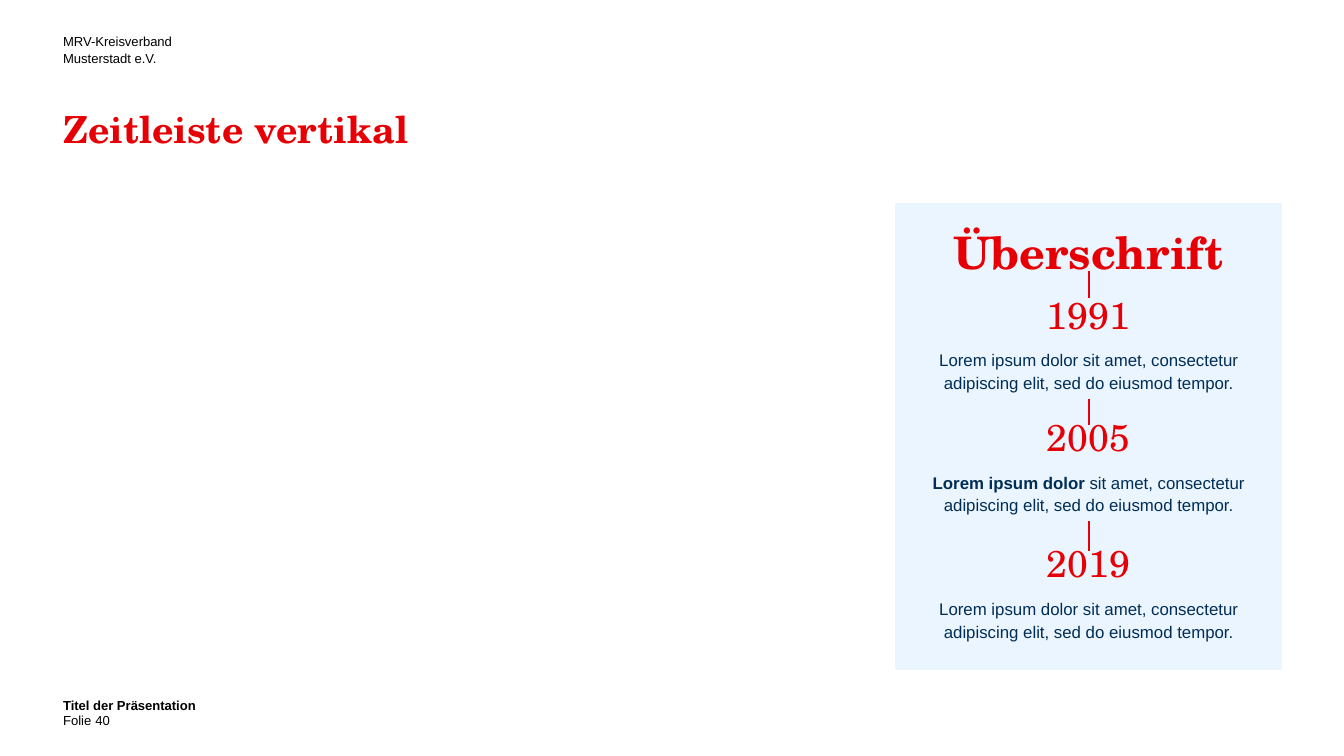
"""Build a slide with a vertical timeline in a tinted panel."""
import pptx
import pptx.dml.color
import pptx.enum.shapes
import pptx.enum.text
import pptx.oxml
import pptx.util

Inches = pptx.util.Inches
Pt = pptx.util.Pt
RGBColor = pptx.dml.color.RGBColor
ALIGN = pptx.enum.text.PP_ALIGN
ANCHOR = pptx.enum.text.MSO_ANCHOR
FIT = pptx.enum.text.MSO_AUTO_SIZE

RED = RGBColor(0xE6, 0x00, 0x05)
NAVY = RGBColor(0x00, 0x2D, 0x55)
BLACK = RGBColor(0x00, 0x00, 0x00)
PALE_BLUE = RGBColor(0xEB, 0xF5, 0xFF)


class TimelineSlide:
    """Holds the text styles and the slide being built."""

    serif = {"name": "TeX Gyre Schola", "size": Pt(20), "bold": False}
    sans = {"name": "Arial", "size": Pt(9), "bold": False}
    title = {**serif, "bold": True}
    heading = {**title, "size": Pt(24)}
    small = {**sans, "size": Pt(7)}
    strong = {**sans, "bold": True}
    label = {"line_spacing": Pt(9), "alignment": ALIGN.LEFT}
    headline = {"line_spacing": Pt(24), "alignment": ALIGN.LEFT}
    centred = {"line_spacing": Pt(12), "alignment": ALIGN.CENTER}
    flush = dict.fromkeys(("margin_left", "margin_top", "margin_right", "margin_bottom"), 0)

    def __init__(self, slide):
        self.slide = slide

    def apply(self, target, values):
        for attribute, value in values.items():
            setattr(target, attribute, value)

    def fill_text(self, shape, paragraphs, color, frame_format):
        frame = shape.text_frame
        self.apply(frame, {"word_wrap": True, "vertical_anchor": ANCHOR.TOP, **frame_format})
        for index, (layout, runs) in enumerate(paragraphs):
            paragraph = frame.add_paragraph() if index else frame.paragraphs[0]
            self.apply(paragraph, layout)
            for words, style in runs:
                run = paragraph.add_run()
                run.text = words
                self.apply(run.font, style)
                run.font.color.rgb = color if style["name"] == "Arial" else RED

    def add_title(self, words, box):
        heading = self.slide.shapes.title
        self.apply(heading, dict(zip(("left", "top", "width", "height"), map(Inches, box))))
        self.fill_text(heading, [(self.headline, [(words, self.title)])], RED,
                       {**self.flush, "auto_size": FIT.NONE})

    def add_text(self, paragraphs, box, color=BLACK, **frame_format):
        text_box = self.slide.shapes.add_textbox(*map(Inches, box))
        self.fill_text(text_box, paragraphs, color, frame_format)
        return text_box

    def add_label(self, lines, box, bold=False, **frame_format):
        paragraphs = [(self.label, [(line, {**self.small, "bold": bold})]) for line in lines]
        return self.add_text(paragraphs, box, **self.flush, **frame_format)

    def add_panel(self, box):
        panel = self.slide.shapes.add_shape(
            pptx.enum.shapes.MSO_SHAPE.RECTANGLE, *map(Inches, box))
        panel.shadow.inherit = False
        panel.fill.solid()
        panel.fill.fore_color.rgb = PALE_BLUE
        panel.line.color.rgb = PALE_BLUE
        panel.line.width = Pt(1)

    def add_entry(self, year, runs, box):
        paragraphs = [({**self.centred, "space_after": Pt(6)}, [(year, self.serif)]),
                      (self.centred, runs)]
        return self.add_text(paragraphs, box, NAVY, auto_size=FIT.SHAPE_TO_FIT_TEXT)

    def add_link(self, x, top, length, entry_above=None):
        link = self.slide.shapes.add_connector(
            pptx.enum.shapes.MSO_CONNECTOR.STRAIGHT,
            Inches(x), Inches(top), Inches(x), Inches(top + length))
        link.line.color.rgb = RED
        link.line.width = Pt(1)
        properties = link._element.spPr
        properties.append(pptx.oxml.parse_xml(
            '<a:effectLst xmlns:a="http://schemas.openxmlformats.org/drawingml/2006/main"/>'))
        if entry_above is not None:
            link.begin_connect(entry_above, 2)


def main():
    presentation = pptx.Presentation()
    presentation.slide_width = Inches(10)
    presentation.slide_height = presentation.slide_width * 9 // 16
    page = TimelineSlide(presentation.slides.add_slide(presentation.slide_layouts[5]))
    margin, content_width = 0.47, 9.06
    panel_left, panel_top, panel_width = 6.67, 1.52, 2.86

    page.add_label(["MRV-Kreisverband", "Musterstadt e.V."], (margin, 0.24, 1.79, 0.25),
                   auto_size=FIT.SHAPE_TO_FIT_TEXT)
    page.add_title("Zeitleiste vertikal", (margin, 0.79, content_width, 0.64))
    page.add_label(["Titel der Präsentation"], (margin, 5.18, content_width, 0.09), bold=True)
    page.add_label(["Folie"], (margin, 5.29, 0.3, 0.13), vertical_anchor=ANCHOR.BOTTOM,
                   auto_size=FIT.SHAPE_TO_FIT_TEXT)
    page.add_label(["40"], (0.71, 5.3, 2.25, 0.12), vertical_anchor=ANCHOR.BOTTOM)

    page.add_panel((panel_left, panel_top, panel_width, 3.46))
    page.add_text([({**page.centred, "line_spacing": Pt(36)}, [("Überschrift", page.heading)])],
                  (panel_left, panel_top, panel_width, 0.56), auto_size=FIT.SHAPE_TO_FIT_TEXT)

    opening = "Lorem ipsum dolor "
    rest = "sit amet, consectetur adipiscing elit, sed do eiusmod tempor."
    plain = [(opening + rest, page.sans)]
    emphasised = [(opening, page.strong), (rest, page.sans)]
    milestones = [("1991", 2.29, plain), ("2005", 3.2, emphasised), ("2019", 4.14, plain)]
    entry_above = None
    for index, (year, top, runs) in enumerate(milestones):
        page.add_link(panel_left + panel_width / 2, 2.02 + 0.94 * index, 0.2, entry_above)
        entry_above = page.add_entry(year, runs, (panel_left, top, panel_width, 0.68))

    presentation.save("out.pptx")


if __name__ == "__main__":
    main()
